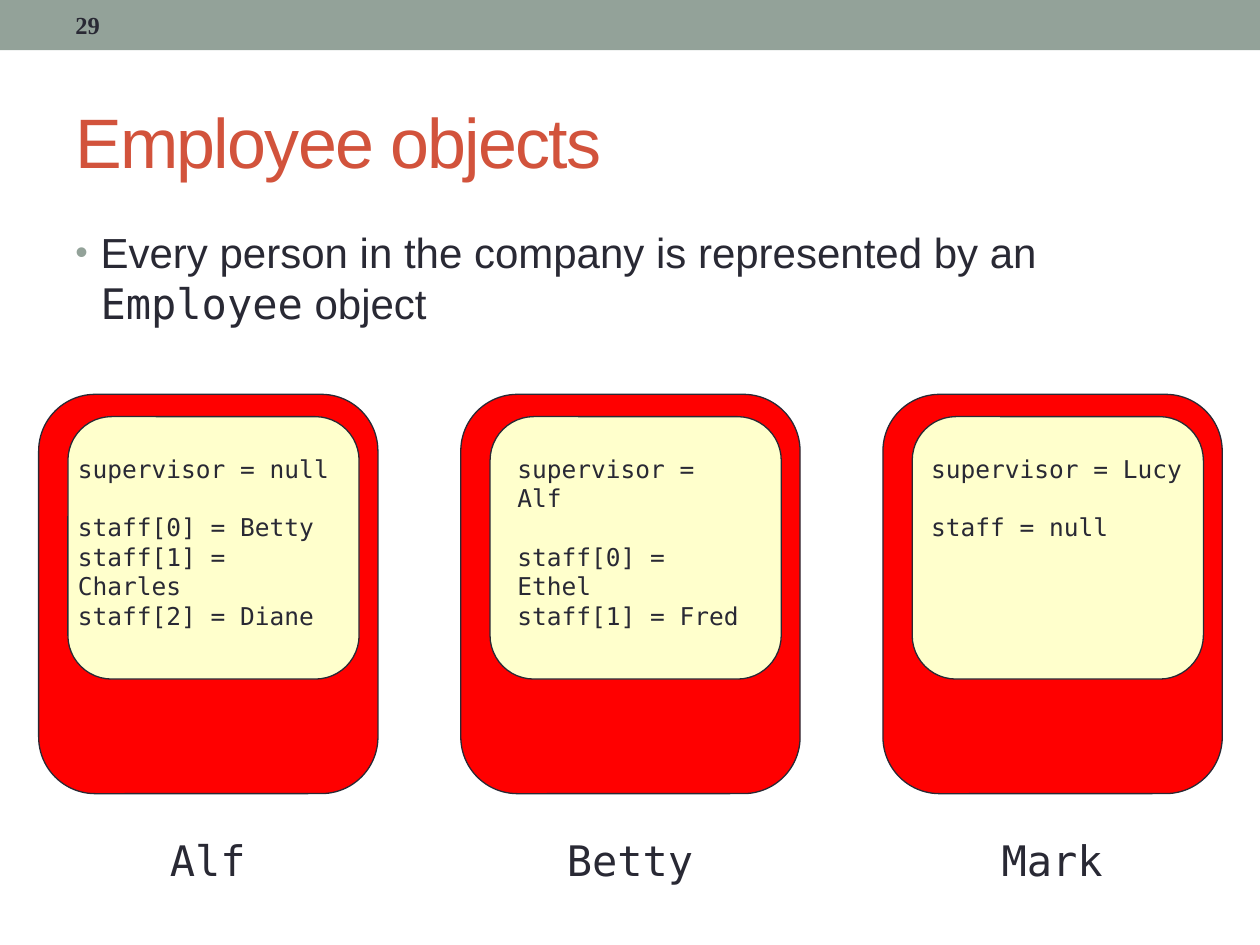
import pptx
import pptx.dml.color
import pptx.enum.shapes
import pptx.enum.text
import pptx.oxml
import pptx.oxml.ns
import pptx.util
from pptx.util import Cm

SAGE = pptx.dml.color.RGBColor(0x93, 0xA2, 0x99)
INK = pptx.dml.color.RGBColor(0x29, 0x29, 0x34)
RUST = pptx.dml.color.RGBColor(0xD2, 0x53, 0x3C)
RED = pptx.dml.color.RGBColor(0xFF, 0x00, 0x00)
CREAM = pptx.dml.color.RGBColor(0xFF, 0xFF, 0xCC)
MONO = "DejaVu Sans Mono"
SHAPES = pptx.enum.shapes.MSO_SHAPE
ALIGN = pptx.enum.text.PP_ALIGN
ANCHOR = pptx.enum.text.MSO_ANCHOR

presentation = pptx.Presentation()
presentation.slide_width = Cm(25.4)
presentation.slide_height = Cm(19.05)
slide = presentation.slides.add_slide(presentation.slide_layouts[6])


def add_text(text, left, top, width, height, size, font="Arial", color=INK,
             bold=False, align=ALIGN.LEFT, anchor=ANCHOR.TOP, spacing=0, gap=0):
    box = slide.shapes.add_textbox(Cm(left), Cm(top), Cm(width), Cm(height))
    frame = box.text_frame
    frame.word_wrap = True
    frame.vertical_anchor = anchor
    for index, line in enumerate(text.split("\n")):
        paragraph = frame.paragraphs[0] if index == 0 else frame.add_paragraph()
        paragraph.alignment = align
        if index == 1:
            paragraph.space_before = pptx.util.Pt(gap)
        for position, part in enumerate(line.split("`")):
            run = paragraph.add_run()
            run.text = part
            run.font.name = MONO if position % 2 else font
            run.font.size = pptx.util.Pt(size)
            run.font.bold = bold
            run.font.color.rgb = color
            if spacing:
                run._r.get_or_add_rPr().set("spc", str(spacing))
    return frame


def add_block(kind, left, top, width, height, fill, outlined=True):
    shape = slide.shapes.add_shape(kind, Cm(left), Cm(top), Cm(width), Cm(height))
    shape.shadow.inherit = False
    shape.fill.solid()
    shape.fill.fore_color.rgb = fill
    if outlined:
        shape.line.color.rgb = INK
        shape.line.width = pptx.util.Pt(0.75)
    else:
        shape.line.fill.background()


add_block(SHAPES.RECTANGLE, 0, 0, 25.4, 1.01, SAGE, outlined=False)
add_text("29", 1.27, 0.05, 8.05, 0.91, 14, font="Times New Roman", bold=True,
         anchor=ANCHOR.MIDDLE)
add_text("Employee objects", 1.27, 1.47, 22.86, 2.74, 40, color=RUST,
         anchor=ANCHOR.MIDDLE, spacing=-100)

body = add_text("Every person in the company is represented by an `Employee` object",
                1.27, 4.45, 22.86, 2.8, 24)
properties = body.paragraphs[0]._p.get_or_add_pPr()
properties.set("marL", str(Cm(0.51)))
properties.set("indent", str(Cm(-0.51)))
namespace = pptx.oxml.ns.nsdecls("a")
for bullet in (
    f'<a:buClr {namespace}><a:srgbClr val="{SAGE}"/></a:buClr>',
    f'<a:buSzPct {namespace} val="85000"/>',
    f'<a:buFont {namespace} typeface="Arial"/>',
    f'<a:buChar {namespace} char="•"/>',
):
    properties.append(pptx.oxml.parse_xml(bullet))

employees = [
    ("Alf", "supervisor = null\nstaff[0] = Betty\nstaff[1] = Charles\nstaff[2] = Diane",
     1.32, 5.79),
    ("Betty", "supervisor = Alf\nstaff[0] = Ethel\nstaff[1] = Fred", 10.18, 5.2),
    ("Mark", "supervisor = Lucy\nstaff = null", 18.52, 5.6),
]
for index, (name, fields, fields_left, fields_width) in enumerate(employees):
    left = 0.78 + 8.51 * index
    add_block(SHAPES.ROUNDED_RECTANGLE, left, 7.95, 6.84, 8.05, RED)
    add_block(SHAPES.ROUNDED_RECTANGLE, left + 0.59, 8.4, 5.87, 5.29, CREAM)
    add_text(fields, fields_left, 9.02, fields_width, 3.7, 14, font=MONO, gap=16.8)
    add_text(name, left + 1.85, 16.69, 3.12, 1.27, 24, font=MONO, align=ALIGN.CENTER)

presentation.save("out.pptx")
